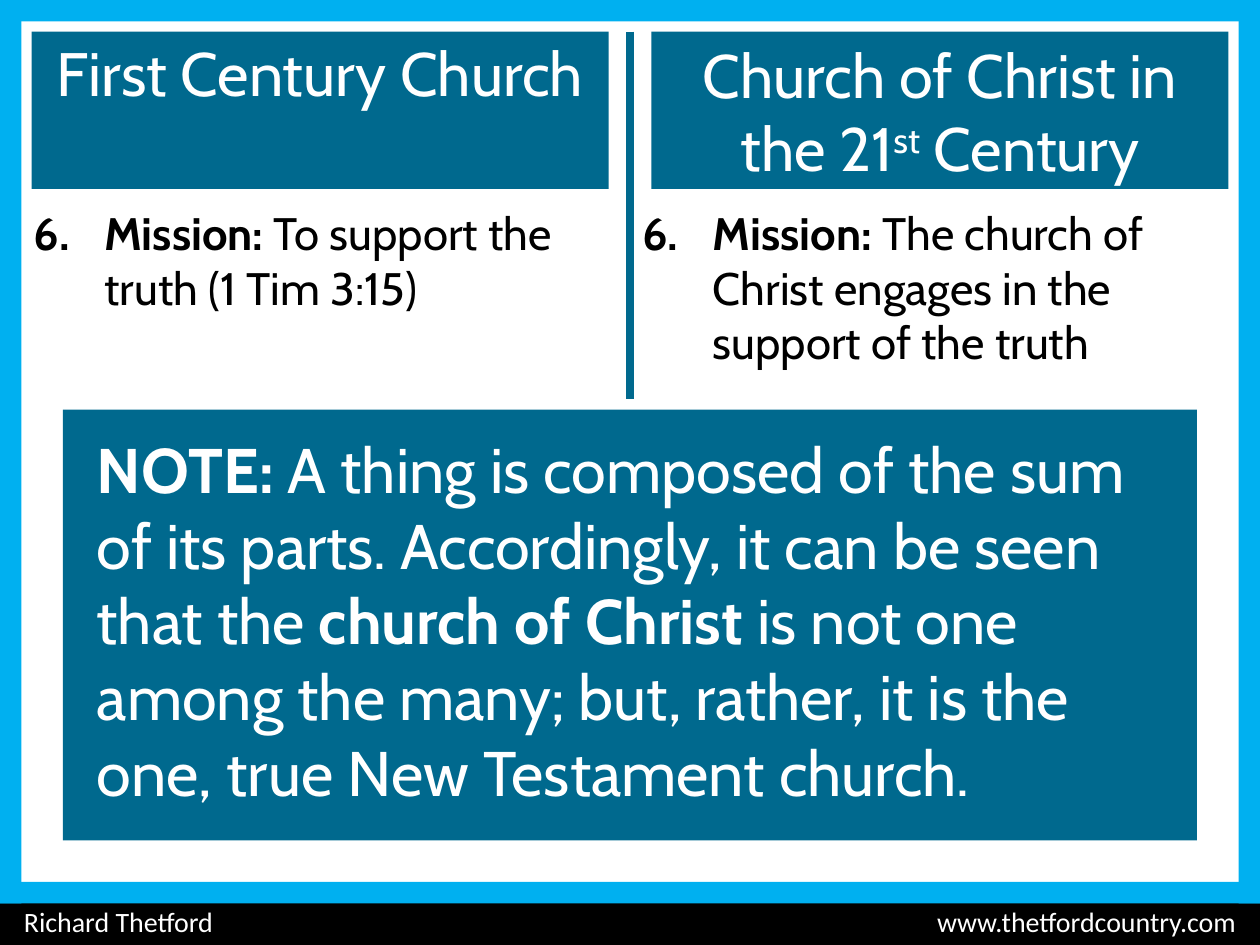
import pptx
import pptx.util
import pptx.dml.color
import pptx.enum.shapes
import pptx.enum.text
import pptx.oxml.ns
from lxml import etree

Inches = pptx.util.Inches
RGBColor = pptx.dml.color.RGBColor
ALIGN = pptx.enum.text.PP_ALIGN
ANCHOR = pptx.enum.text.MSO_ANCHOR
qn = pptx.oxml.ns.qn

TEAL = RGBColor(0x00, 0x69, 0x8E)
SKY = RGBColor(0x00, 0xB0, 0xF0)
BLACK = RGBColor(0, 0, 0)
WHITE = RGBColor(255, 255, 255)


def add_rect(s, box, color):
    """Add a plain filled rectangle to the slide."""
    sp = s.shapes.add_shape(pptx.enum.shapes.MSO_SHAPE.RECTANGLE, *map(Inches, box))
    sp.shadow.inherit = False
    sp.fill.solid()
    sp.fill.fore_color.rgb = color
    sp.line.fill.background()
    return sp


def add_text_box(s, box):
    """Add an empty text box to the slide."""
    return s.shapes.add_textbox(*map(Inches, box))


def write(sp, runs, *, size, color, font="Cabin", align=ALIGN.LEFT,
          anchor=ANCHOR.TOP, hanging=0):
    """Write (text, style) runs as one paragraph; style is "", "bold" or "super"."""
    tf = sp.text_frame
    tf.word_wrap = True
    tf.vertical_anchor = anchor
    p = tf.paragraphs[0]
    p.alignment = align
    if hanging:
        pPr = p._p.get_or_add_pPr()
        pPr.set("marL", str(Inches(hanging)))
        pPr.set("indent", str(-Inches(hanging)))
    for text, style in runs:
        r = p.add_run()
        r.text = text
        r.font.name = font
        r.font.size = pptx.util.Pt(size)
        r.font.color.rgb = color
        r.font.bold = style == "bold"
        if style == "super":
            r._r.get_or_add_rPr().set("baseline", "30000")
    return p


def add_footer(s, box, left, right):
    """Add the footer bar with text at both ends."""
    sp = add_rect(s, box, BLACK)
    sp.text_frame.margin_left = Inches(0.19)
    p = write(sp, [(f"{left}\t{right}", "")], size=16, color=WHITE,
              font="Calibri", anchor=ANCHOR.MIDDLE)
    tabs = etree.SubElement(p._p.get_or_add_pPr(), qn("a:tabLst"))
    etree.SubElement(tabs, qn("a:tab"), pos=str(Inches(box[2] - 0.38)), algn="r")


def add_frame(s, box, thick):
    """Add four bars along the inside edges of the box."""
    x, y, w, h = box
    for bar in ((x, y, thick, h), (x + w - thick, y, thick, h),
                (x, y, w, thick), (x, y + h - thick, w, thick)):
        add_rect(s, bar, SKY)


def add_heading(s, box, runs, anchor):
    """Add a column heading."""
    sp = add_rect(s, box, TEAL)
    sp.text_frame.margin_top = sp.text_frame.margin_bottom = Inches(0.03)
    write(sp, runs, size=35, color=WHITE, align=ALIGN.CENTER, anchor=anchor)


def add_point(s, box, label, text):
    """Add a numbered point with a hanging indent."""
    write(add_text_box(s, box), [(label, "bold"), (text, "")],
          size=26, color=BLACK, hanging=0.56)


def add_divider(s, x, top, bottom):
    """Add the vertical line between the columns."""
    line = s.shapes.add_connector(pptx.enum.shapes.MSO_CONNECTOR.STRAIGHT,
                                  Inches(x), Inches(top), Inches(x), Inches(bottom))
    line.line.color.rgb = TEAL
    line.line.width = pptx.util.Pt(4.5)
    etree.SubElement(line._element.spPr, qn("a:effectLst"))


def add_note(s, box, runs):
    """Add the note panel with its text inset."""
    x, y, w, h = box
    add_rect(s, box, TEAL)
    write(add_text_box(s, (x + 0.17, y + 0.12, w - 0.33, h - 0.29)), runs,
          size=36, color=WHITE)


def main():
    """Build the slide and save it."""
    prs = pptx.Presentation()
    prs.slide_width, prs.slide_height = Inches(10), Inches(7.5)
    s = prs.slides.add_slide(prs.slide_layouts[6])
    add_footer(s, (0, 7.13, 10, 0.37), "Richard Thetford", "www.thetfordcountry.com")
    add_frame(s, (0, 0, 10, 7.17), 0.17)
    add_heading(s, (0.25, 0.25, 4.58, 1.25), [("First Century Church", "")], ANCHOR.TOP)
    add_heading(s, (5.17, 0.25, 4.58, 1.25),
                [("Church of Christ in the 21", ""), ("st", "super"), (" Century", "")],
                ANCHOR.MIDDLE)
    add_divider(s, 5, 0.25, 3.17)
    add_point(s, (0.17, 1.58, 4.75, 1.25), "6.\tMission:",
              " To support the truth (1 Tim 3:15)")
    add_point(s, (5, 1.58, 4.75, 1.5), "6.\tMission:",
              " The church of Christ engages in the support of the truth")
    add_note(s, (0.5, 3.25, 9, 3.42), [
        ("NOTE:", "bold"),
        (" A thing is composed of the sum of its parts. Accordingly, "
         "it can be seen that the ", ""),
        ("church of Christ ", "bold"),
        ("is not one among the many; but, rather, it is the one, "
         "true New Testament church.", "")])
    prs.save("out.pptx")


if __name__ == "__main__":
    main()
